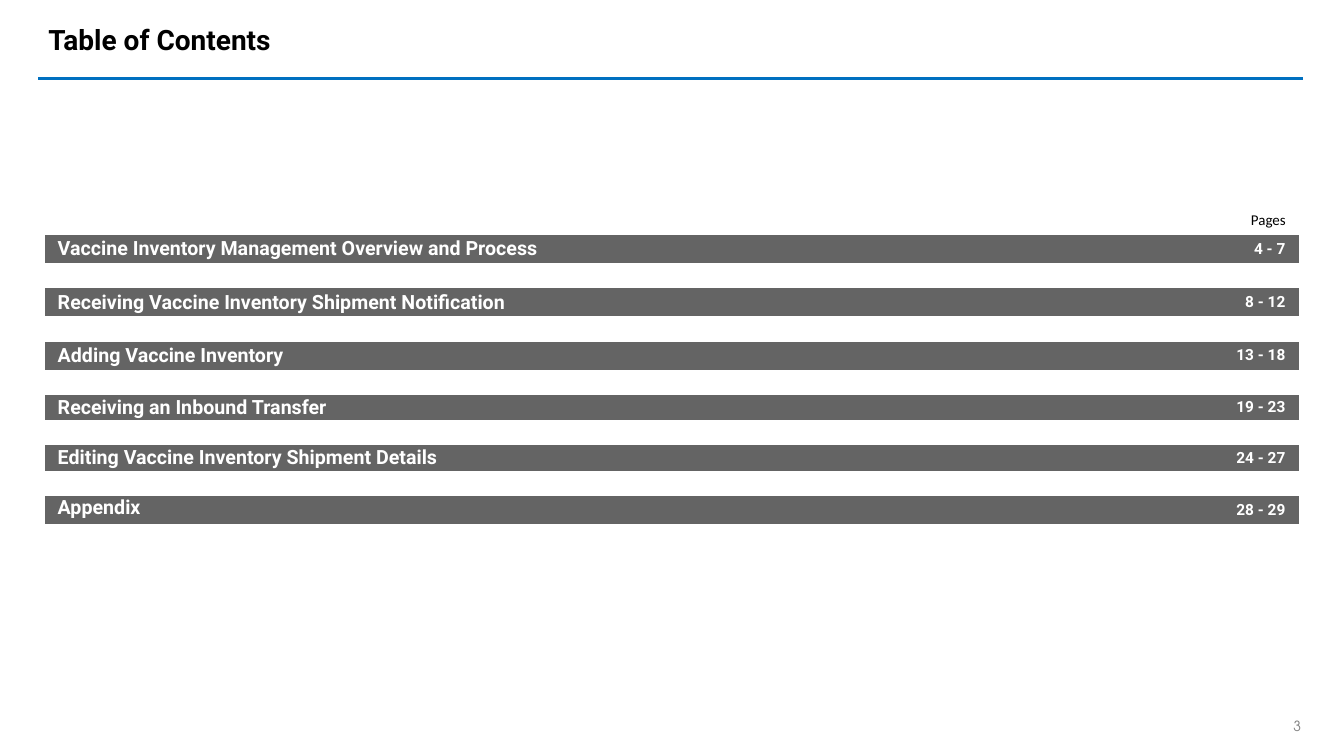
from lxml.etree import SubElement
from pptx import Presentation
from pptx.dml.color import RGBColor
from pptx.enum.shapes import MSO_CONNECTOR as Connector
from pptx.enum.text import MSO_ANCHOR as Anchor, PP_ALIGN as Align
from pptx.oxml.ns import qn
from pptx.util import Pt

BLACK = RGBColor(0x00, 0x00, 0x00)
WHITE = RGBColor(0xFF, 0xFF, 0xFF)
GRAY = RGBColor(0x80, 0x80, 0x80)
BAR_GRAY = RGBColor(0x64, 0x64, 0x64)
RULE_BLUE = RGBColor(0x00, 0x70, 0xC0)

NO_GRID_STYLE = "{2D5ABB26-0587-4C30-8999-92F81FD0307C}"
TALL, SHORT = 20.1, 18
CHAPTERS = [
    ("Vaccine Inventory Management Overview and Process", "4 - 7", TALL, SHORT),
    ("Receiving Vaccine Inventory Shipment Notification", "8 - 12", TALL, SHORT),
    ("Adding Vaccine Inventory", "13 - 18", TALL, SHORT),
    ("Receiving an Inbound Transfer", "19 - 23", SHORT, SHORT),
    ("Editing Vaccine Inventory Shipment Details", "24 - 27", SHORT, SHORT),
    ("Appendix", "28 - 29", TALL, TALL),
]


def add_run(paragraph, text, font_name, size, color, bold=False):
    run = paragraph.add_run()
    run.text = text
    run.font.name = font_name
    run.font.size = Pt(size)
    run.font.bold = bold
    run.font.color.rgb = color


def set_margins(target, horizontal, vertical):
    target.margin_left = target.margin_right = Pt(horizontal)
    target.margin_top = target.margin_bottom = Pt(vertical)


def add_text(slide, box, margins, text, font_name, size, color,
             bold=False, align=Align.LEFT, wrap=True):
    shape = slide.shapes.add_textbox(*map(Pt, box))
    frame = shape.text_frame
    frame.word_wrap = wrap
    frame.vertical_anchor = Anchor.MIDDLE
    set_margins(frame, *margins)
    paragraph = frame.paragraphs[0]
    paragraph.alignment = align
    add_run(paragraph, text, font_name, size, color, bold)


def add_rule(slide, left, right, y):
    line = slide.shapes.add_connector(
        Connector.STRAIGHT, Pt(left), Pt(y), Pt(right), Pt(y))
    line.line.color.rgb = RULE_BLUE
    line.line.width = Pt(2.25)
    SubElement(line._element.spPr, qn("a:effectLst"))


def fill_bar_cell(cell, text, size, align, anchor):
    cell.fill.solid()
    cell.fill.fore_color.rgb = BAR_GRAY
    cell.vertical_anchor = anchor
    set_margins(cell, 9.36, 0)
    paragraph = cell.text_frame.paragraphs[0]
    paragraph.alignment = align
    add_run(paragraph, text, "Roboto", size, WHITE, True)


def clear_gap_cell(cell):
    cell.fill.background()
    set_margins(cell, 0, 0)
    paragraph = cell.text_frame.paragraphs[0]
    SubElement(paragraph._p, qn("a:endParaRPr"), sz="1000")


def add_contents_table(slide, left, top, column_widths):
    height = sum(bar + gap for _, _, bar, gap in CHAPTERS)
    frame = slide.shapes.add_table(
        2 * len(CHAPTERS), 2, Pt(left), Pt(top), Pt(sum(column_widths)), Pt(height))
    table = frame.table
    table.first_row = table.horz_banding = False
    table._tbl.tblPr.find(qn("a:tableStyleId")).text = NO_GRID_STYLE
    for column, width in zip(table.columns, column_widths):
        column.width = Pt(width)
    for index, (title, pages, bar, gap) in enumerate(CHAPTERS):
        row = 2 * index
        table.rows[row].height = Pt(bar)
        table.rows[row + 1].height = Pt(gap)
        title_anchor = Anchor.TOP if title == "Appendix" else Anchor.MIDDLE
        fill_bar_cell(table.cell(row, 0), title, 14, Align.LEFT, title_anchor)
        fill_bar_cell(table.cell(row, 1), pages, 11, Align.RIGHT, Anchor.MIDDLE)
        for column in range(2):
            clear_gap_cell(table.cell(row + 1, column))


def main():
    presentation = Presentation()
    presentation.slide_width = Pt(960)
    presentation.slide_height = Pt(540)
    slide = presentation.slides.add_slide(presentation.slide_layouts[6])
    add_text(slide, (910.1, 512.6, 33.1, 12.2), (0, 0), "3",
             "TeX Gyre Adventor", 10, GRAY, align=Align.CENTER)
    add_text(slide, (27.4, -0.7, 903.6, 56.9), (7.2, 3.6), "Table of Contents",
             "Roboto", 20, BLACK, bold=True)
    add_rule(slide, 27.4, 931, 56.2)
    add_contents_table(slide, 31.9, 167.8, (727.9, 167.8))
    add_text(slide, (884.2, 145.4, 46.8, 22.3), (9.36, 5), "Pages",
             "Calibri", 10.7, BLACK, wrap=False)
    presentation.save("out.pptx")


if __name__ == "__main__":
    main()
